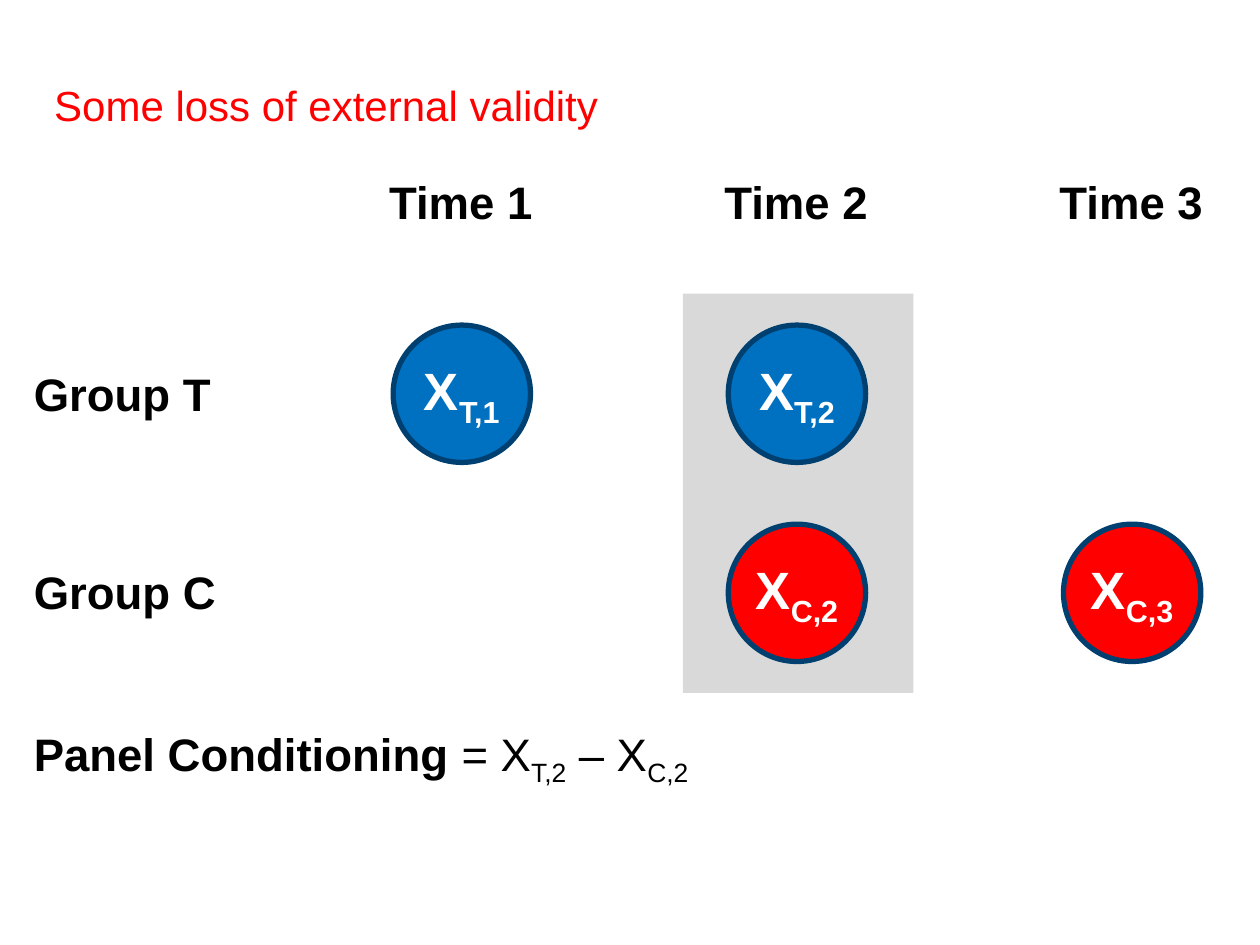
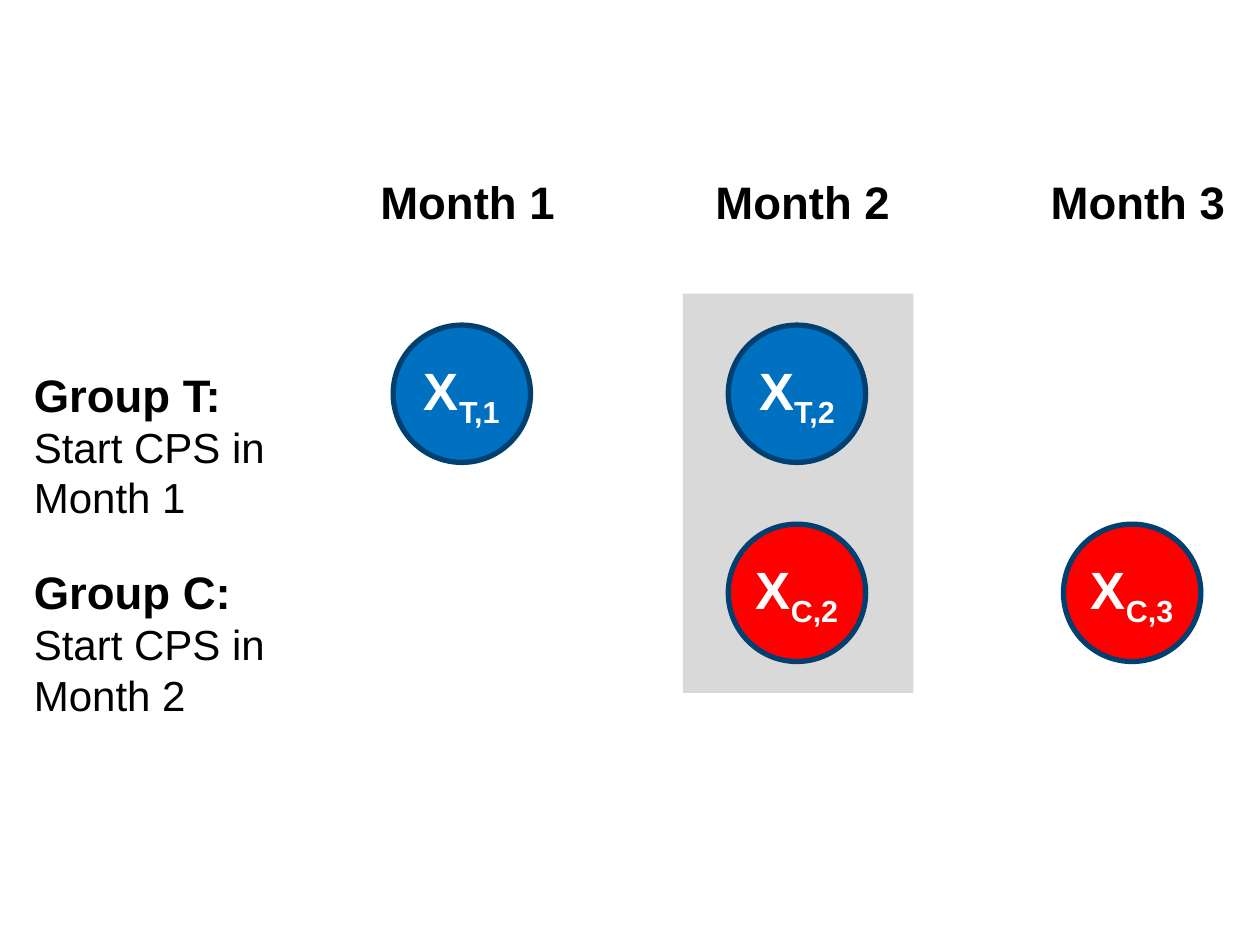
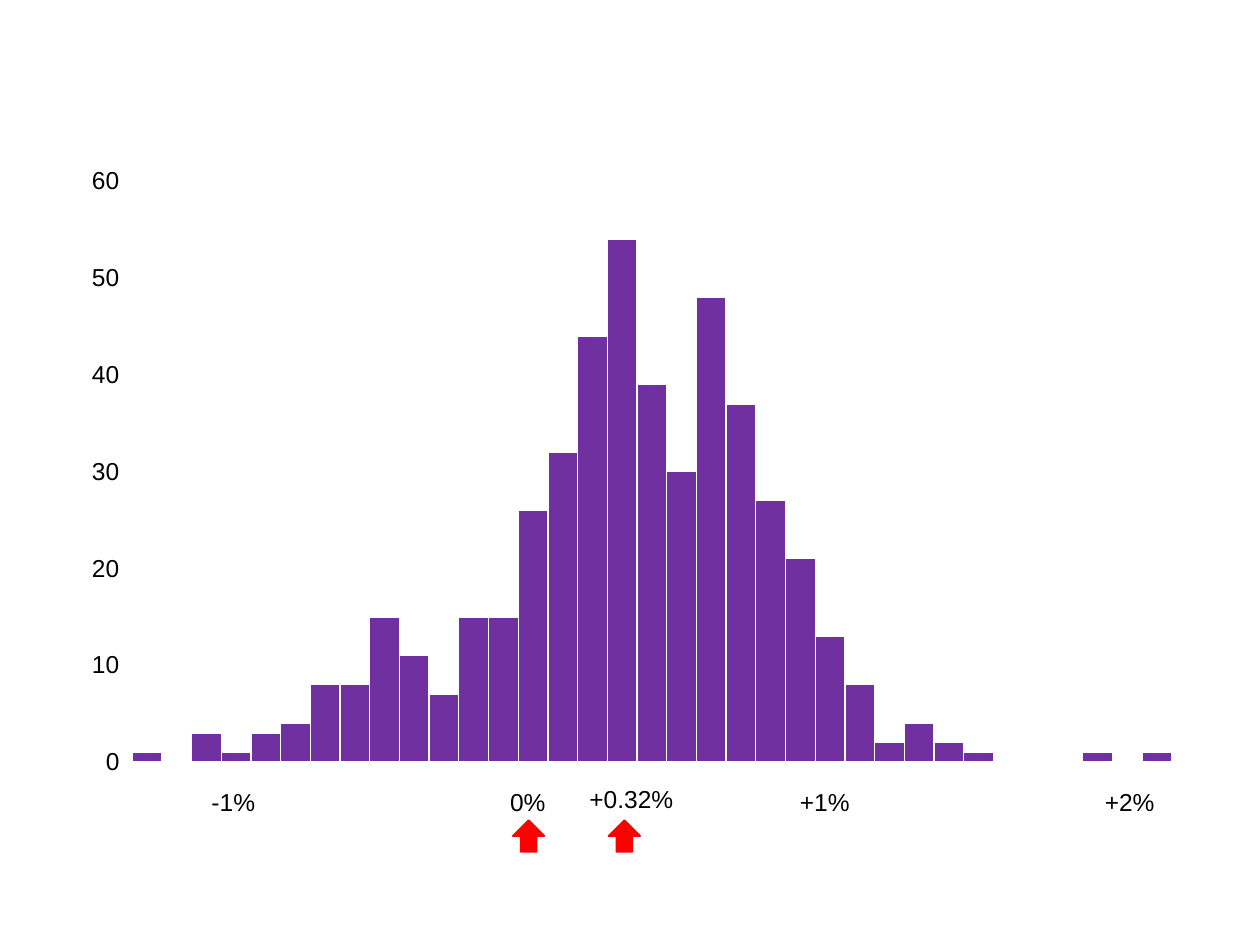
from lxml import etree
from pptx import Presentation
from pptx.chart.data import CategoryChartData
from pptx.dml.color import RGBColor
from pptx.enum.chart import XL_CHART_TYPE as ChartType, XL_TICK_MARK as TickMark
from pptx.enum.shapes import MSO_SHAPE as Preset
from pptx.enum.text import MSO_ANCHOR as Anchor, MSO_AUTO_SIZE as AutoSize, PP_ALIGN as Align
from pptx.oxml.ns import qn
from pptx.util import Inches, Pt

COLORS = {
    "text": "000000",
    "inverse": "FFFFFF",
    "accent": "FF0000",
    "treatment": "0070C0",
    "control": "FF0000",
    "outline": "004070",
    "band": "D9D9D9",
    "bars": "7030A0",
}
FONT = "Arial"
TITLE_ONLY, BLANK = 5, 6
COLUMN_PITCH = 2.66
CIRCLE_LEFT = 3.12
CIRCLE_SIZE = 1.09
ROW_TOPS = {"T": 2.58, "C": 4.16}
LABEL_TOPS = {"T": 2.86, "C": 4.43}
OBSERVATIONS = [("T", 1), ("T", 2), ("C", 2), ("C", 3)]
FREQUENCIES = [
    1, 0, 3, 1, 3, 4, 8, 8, 15, 11, 7, 15, 15, 26, 32, 44, 54, 39,
    30, 48, 37, 27, 21, 13, 8, 2, 4, 2, 1, 0, 0, 0, 1, 0, 1,
]
PLOT_LAYOUT = {"x": 0.06, "y": 0.04, "w": 0.92, "h": 0.92}


def color(name):
    return RGBColor.from_string(COLORS[name])


class Deck:
    def __init__(self):
        self.presentation = Presentation()
        self.presentation.slide_width = Inches(10)
        self.presentation.slide_height = Inches(7.5)
        self.slide = None

    def add_slide(self, layout=BLANK):
        layouts = self.presentation.slide_layouts
        self.slide = self.presentation.slides.add_slide(layouts[layout])

    def style_font(self, font, size, color_name="text", bold=False):
        font.name = FONT
        font.size = Pt(size)
        font.bold = bold
        font.color.rgb = color(color_name)

    def subscript(self, paragraph, text):
        run = paragraph.add_run()
        run.text = text
        run._r.get_or_add_rPr().set("baseline", "-25000")

    def title(self, text):
        shape = self.slide.shapes.title
        shape.left, shape.top = Inches(0.33), Inches(0.58)
        shape.width, shape.height = Inches(9.08), Inches(0.5)
        frame = shape.text_frame
        frame.text = text
        frame.word_wrap = True
        frame.auto_size = AutoSize.NONE
        frame.vertical_anchor = Anchor.TOP
        paragraph = frame.paragraphs[0]
        paragraph.alignment = Align.LEFT
        self.style_font(paragraph.font, 24, "accent")

    def label(self, left, top, width, lines, size=26, bold=True, height=0.54):
        box = self.slide.shapes.add_textbox(
            Inches(left), Inches(top), Inches(width), Inches(height))
        frame = box.text_frame
        frame.word_wrap = False
        frame.auto_size = AutoSize.SHAPE_TO_FIT_TEXT
        frame.text = "\n".join(lines)
        for index, paragraph in enumerate(frame.paragraphs):
            if index == 0:
                self.style_font(paragraph.font, size, bold=bold)
            else:
                self.style_font(paragraph.font, 24)
        return frame.paragraphs[0]

    def shape(self, preset, left, top, width, height, fill, line=None, line_width=1):
        shape = self.slide.shapes.add_shape(
            preset, Inches(left), Inches(top), Inches(width), Inches(height))
        shape.shadow.inherit = False
        shape.fill.solid()
        shape.fill.fore_color.rgb = color(fill)
        if line:
            shape.line.color.rgb = color(line)
            shape.line.width = Pt(line_width)
        else:
            shape.line.fill.background()
        return shape

    def observation(self, group, time):
        left = CIRCLE_LEFT + COLUMN_PITCH * (time - 1)
        fill = "treatment" if group == "T" else "control"
        circle = self.shape(Preset.OVAL, left, ROW_TOPS[group],
                            CIRCLE_SIZE, CIRCLE_SIZE, fill, "outline", 3)
        frame = circle.text_frame
        frame.margin_left = frame.margin_right = 0
        frame.margin_top = frame.margin_bottom = 0
        frame.vertical_anchor = Anchor.MIDDLE
        frame.text = "X"
        paragraph = frame.paragraphs[0]
        paragraph.alignment = Align.CENTER
        self.subscript(paragraph, f"{group},{time}")
        self.style_font(paragraph.font, 30, "inverse", True)

    def design(self, period, header_left, header_width):
        self.shape(Preset.RECTANGLE, 5.42, 2.33, 1.83, 3.17, "band")
        for index in range(3):
            self.label(header_left + COLUMN_PITCH * index, 1.33, header_width,
                       [f"{period} {index + 1}"])
        for group, time in OBSERVATIONS:
            self.observation(group, time)

    def conditioning_formula(self):
        paragraph = self.label(0.17, 5.71, 5.67, ["Panel Conditioning "], bold=None)
        paragraph.runs[0].font.bold = True
        for text, index in (("= X", "T,2"), (" – X", "C,2")):
            paragraph.add_run().text = text
            self.subscript(paragraph, index)

    def histogram(self, frequencies):
        data = CategoryChartData()
        data.categories = [str(number + 1) for number in range(len(frequencies))]
        data.add_series("Series 1", frequencies)
        chart = self.slide.shapes.add_chart(
            ChartType.COLUMN_CLUSTERED, Inches(0.51), Inches(1.24),
            Inches(8.97), Inches(5.01), data).chart
        chart.has_legend = False
        chart.has_title = False
        self.style_font(chart.font, 10)
        chart.category_axis.visible = False
        chart.category_axis.has_major_gridlines = False
        axis = chart.value_axis
        axis.has_major_gridlines = False
        axis.minimum_scale, axis.maximum_scale, axis.major_unit = 0, 60, 10
        axis.major_tick_mark = TickMark.OUTSIDE
        axis.format.line.fill.background()
        self.style_font(axis.tick_labels.font, 14)
        plot = chart.plots[0]
        plot.gap_width = 0
        plot.vary_by_categories = False
        bars = plot.series[0].format
        bars.fill.solid()
        bars.fill.fore_color.rgb = color("bars")
        bars.line.color.rgb = color("inverse")
        bars.line.width = Pt(0.75)
        self.place_plot(chart)

    def place_plot(self, chart):
        area = chart._chartSpace.find(".//" + qn("c:plotArea"))
        layout = area.find(qn("c:layout"))
        if layout is None:
            layout = etree.Element(qn("c:layout"))
            area.insert(0, layout)
        manual = etree.SubElement(layout, qn("c:manualLayout"))
        settings = {"layoutTarget": "inner", "xMode": "edge", "yMode": "edge", **PLOT_LAYOUT}
        for name, value in settings.items():
            etree.SubElement(manual, qn(f"c:{name}")).set("val", str(value))

    def save(self):
        self.presentation.save("out.pptx")


def main():
    deck = Deck()

    deck.add_slide(TITLE_ONLY)
    deck.title("Some loss of external validity")
    deck.design("Time", 2.99, 1.35)
    for group, width in (("T", 1.62), ("C", 1.66)):
        deck.label(0.17, LABEL_TOPS[group], width, [f"Group {group}"])
    deck.conditioning_formula()

    deck.add_slide()
    deck.design("Month", 2.92, 1.6)
    for month, group in enumerate("TC", start=1):
        deck.label(0.17, LABEL_TOPS[group], 2.15,
                   [f"Group {group}:", "Start CPS in", f"Month {month}"], height=1.35)

    deck.add_slide()
    deck.histogram(FREQUENCIES)
    percent_labels = [
        ("-1%", 1.58, 6.2, 0.55),
        ("0%", 3.95, 6.2, 0.49),
        ("+0.32%", 4.58, 6.17, 0.87),
        ("+1%", 6.25, 6.2, 0.6),
        ("+2%", 8.67, 6.2, 0.6),
    ]
    for text, left, top, width in percent_labels:
        deck.label(left, top, width, [text], size=14, bold=False, height=0.34)
    for left in (4.07, 4.83):
        deck.shape(Preset.UP_ARROW, left, 6.51, 0.25, 0.25, "accent", "accent")

    deck.save()


if __name__ == "__main__":
    main()
